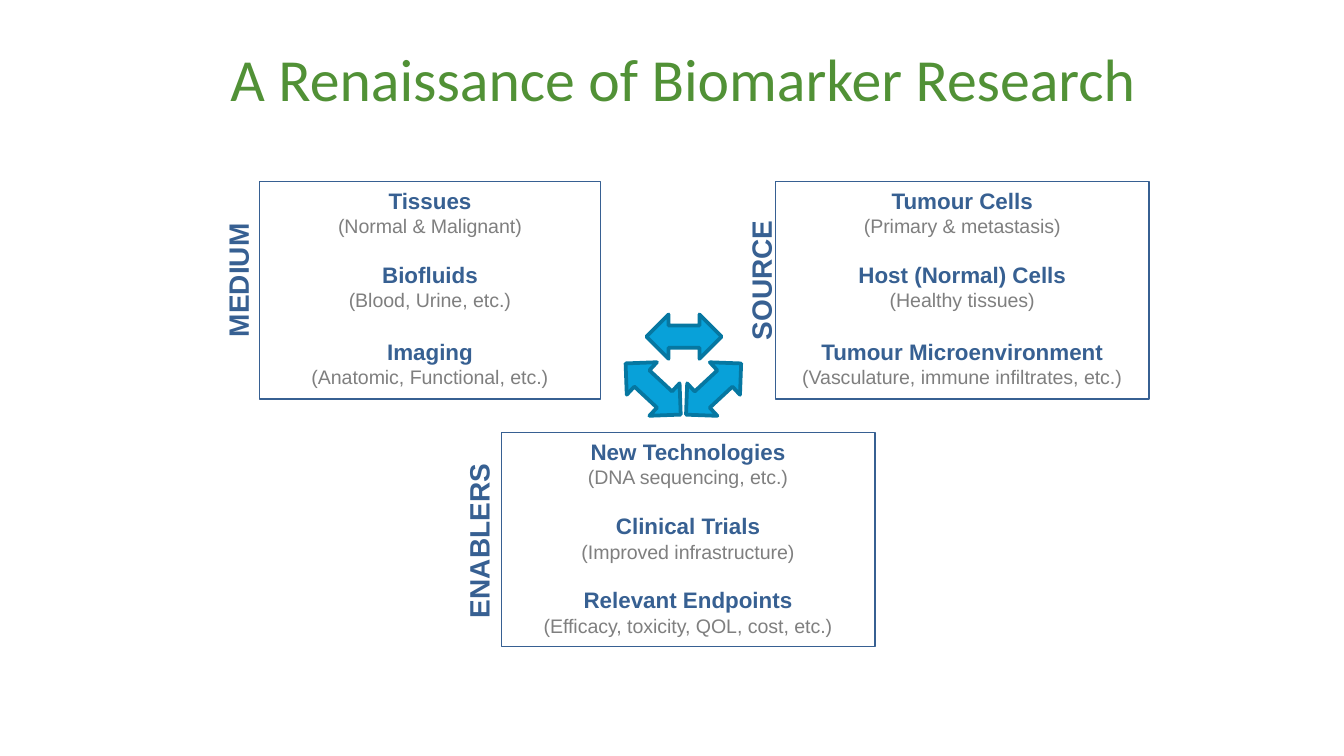
from pptx import Presentation, util as u
from pptx.dml.color import RGBColor
from pptx.enum import shapes, text

NAVY, GREY, GREEN = "376092", "7F7F7F", "519136"
CYAN, TEAL = "08A1D9", "0677A1"


def color(value):
    return RGBColor.from_string(value)


def format_paragraph(paragraph, name, size, value, bold=False):
    paragraph.alignment = text.PP_ALIGN.CENTER
    for run in paragraph.runs:
        run.font.name = name
        run.font.size = u.Pt(size)
        run.font.bold = bold
        run.font.color.rgb = color(value)


# Widescreen slide, 16:9
presentation = Presentation()
presentation.slide_width = u.Inches(10)
presentation.slide_height = u.Inches(10 * 9 / 16)
slide = presentation.slides.add_slide(presentation.slide_layouts[6])

# Title
title = slide.shapes.add_textbox(*map(u.Inches, (1.6, 0.23, 6.97, 0.7)))
title.text_frame.word_wrap = True
title.text_frame.vertical_anchor = text.MSO_ANCHOR.MIDDLE
title.text_frame.text = "A Renaissance of Biomarker Research"
format_paragraph(title.text_frame.paragraphs[0], "Calibri", 32, GREEN)

# Panels: label, label box, panel box, gaps above topics in points, topics
panels = [
    ("MEDIUM", (1.24, 1.91, 1.06, 0.35), (1.93, 1.35, 2.54, 1.62), (0, 13.2, 14.8),
     [("Tissues", "(Normal & Malignant)"),
      ("Biofluids", "(Blood, Urine, etc.)"),
      ("Imaging", "(Anatomic, Functional, etc.)")]),
    ("SOURCE", (5.11, 1.91, 1.1, 0.35), (5.77, 1.35, 2.78, 1.62), (0, 13.2, 14.8),
     [("Tumour Cells", "(Primary & metastasis)"),
      ("Host (Normal) Cells", "(Healthy tissues)"),
      ("Tumour Microenvironment", "(Vasculature, immune infiltrates, etc.)")]),
    ("ENABLERS", (2.88, 3.85, 1.36, 0.35), (3.73, 3.22, 2.78, 1.59), (0, 13.2, 13.2),
     [("New Technologies", "(DNA sequencing, etc.)"),
      ("Clinical Trials", "(Improved infrastructure)"),
      ("Relevant Endpoints", "(Efficacy, toxicity, QOL, cost, etc.)")]),
]
for label, label_box, panel_box, gaps, topics in panels:
    panel = slide.shapes.add_shape(shapes.MSO_SHAPE.RECTANGLE, *map(u.Inches, panel_box))
    panel.shadow.inherit = False
    panel.fill.background()
    panel.line.color.rgb = color(NAVY)
    panel.line.width = u.Pt(0.75)
    frame = panel.text_frame
    frame.word_wrap = True
    frame.vertical_anchor = text.MSO_ANCHOR.TOP
    frame.text = "\n".join(line for topic in topics for line in topic)
    for index, paragraph in enumerate(frame.paragraphs):
        if index % 2:
            paragraph.line_spacing = u.Pt(12.7)
            format_paragraph(paragraph, "Arial", 10.5, GREY)
        else:
            paragraph.line_spacing = u.Pt(13.8)
            format_paragraph(paragraph, "Arial", 12, NAVY, bold=True)
            if index:
                paragraph.space_before = u.Pt(gaps[index // 2])

    # Vertical label beside the panel
    caption = slide.shapes.add_textbox(*map(u.Inches, label_box))
    caption.rotation = 270
    caption.text_frame.word_wrap = False
    caption.text_frame.text = label
    format_paragraph(caption.text_frame.paragraphs[0], "Arial", 15, NAVY, bold=True)

# Triangle of double arrows between the panels
for left, top, rotation in [(4.81, 2.34, 0), (5.03, 2.73, 317.1), (4.58, 2.73, 42.9)]:
    arrow = slide.shapes.add_shape(shapes.MSO_SHAPE.LEFT_RIGHT_ARROW,
                                   *map(u.Inches, (left, top, 0.56, 0.33)))
    arrow.rotation = rotation
    arrow.shadow.inherit = False
    arrow.fill.solid()
    arrow.fill.fore_color.rgb = color(CYAN)
    arrow.line.color.rgb = color(TEAL)
    arrow.line.width = u.Pt(2)

presentation.save("out.pptx")
